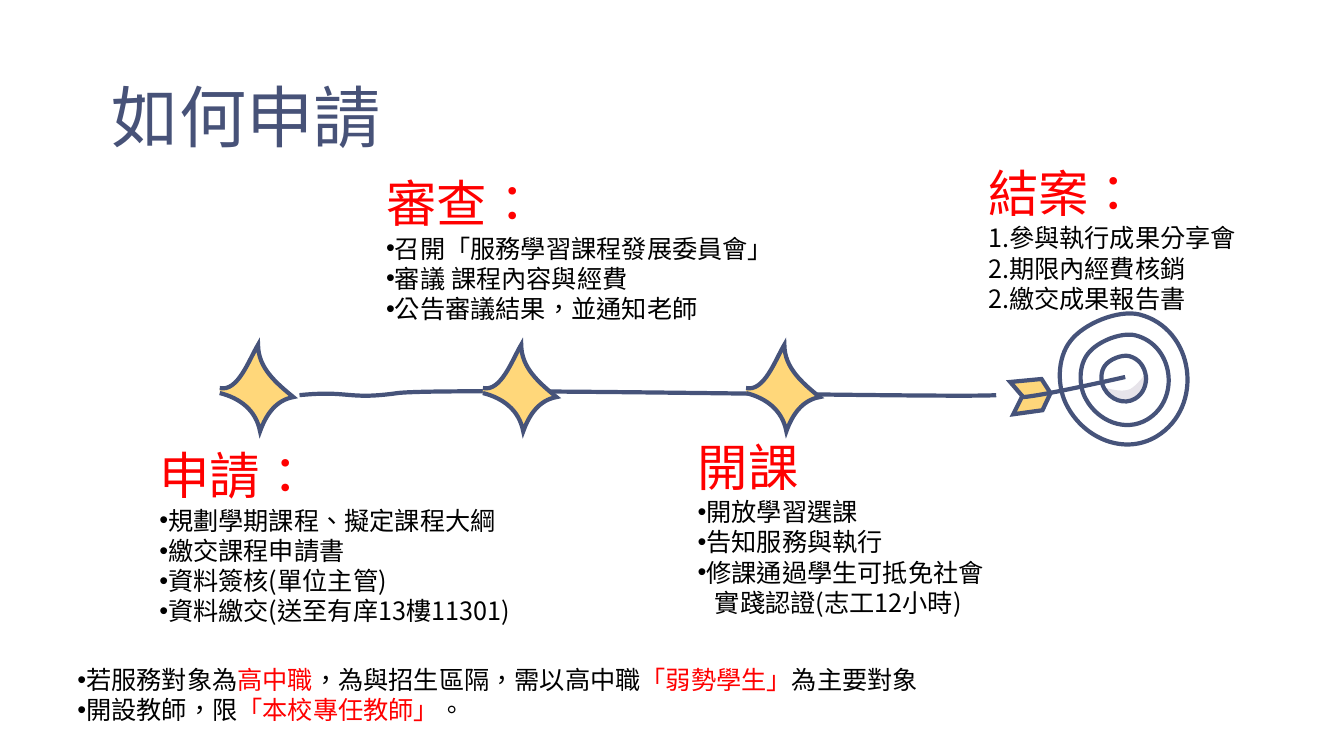
from math import cos, radians, sin

from lxml import etree
from pptx import Presentation
from pptx.dml.color import RGBColor
from pptx.enum.text import MSO_ANCHOR, MSO_AUTO_SIZE, PP_ALIGN
from pptx.oxml.ns import qn
from pptx.util import Pt

PX = 9144  # 100 px to the inch
FONT, BULLET_FONT = "Noto Sans CJK JP", "Arial"
NAVY, GOLD, RED, BLACK = "46537A", "FFD77A", "FF0000", "000000"
MIDDLE, TOP = MSO_ANCHOR.MIDDLE, MSO_ANCHOR.TOP
LEFT = PP_ALIGN.LEFT
NO_AUTOFIT = MSO_AUTO_SIZE.NONE
TARGET_TILT, TIMELINE_TILT = 34.8, 105

# Points are px from the corner of the shape's box; six numbers make a curve.
STAR = [(0, 43), (18, 47, 29, 15, 38, 0), (38, 23, 56, 38, 73, 52),
        (56, 55, 46, 69, 40, 86), (36, 65, 20, 53, 0, 48)]
TIMELINE = [(-256, 334), (-206, 329, -209, 339, -159, 332),
            (-113, 326, 390, 337, 435, 334)]
RING = [(9, 93), (26, 124, 65, 141, 97, 122), (145, 93, 135, 15, 80, 1),
        (59, -4, 25, 10, 12, 27), (-2, 44, -2, 74, 9, 93)]
RING_WIDTH = 129
SHADE = [(-6, 23), (-6, 28, 3, 33, 6, 35), (12, 37, 19, 36, 24, 33),
         (31, 29, 40, 16, 35, 8), (29, 13, 25, 20, 18, 24),
         (11, 27, 2, 25, -6, 23)]
FLETCHING = [(17, 23), (5, 9), (36, 6), (45, 20), (37, 37), (8, 41), (17, 23)]
SHAFT = [(87, 27), (87, 27, 4, 46, -15, 47)]


def color(value):
    return RGBColor.from_string(value)


def turn_back(x, y, width, height, degrees):
    """Find the point that lands on (x, y) once its box is rotated."""
    angle = radians(-degrees)
    dx, dy = x - width / 2, y - height / 2
    return (width / 2 + dx * cos(angle) - dy * sin(angle),
            height / 2 + dx * sin(angle) + dy * cos(angle))


def fill_path(path, segments, size, rotation, scale, close):
    """Replace the commands of a path by moves, lines and cubic curves."""
    for command in list(path):
        path.remove(command)
    for index, segment in enumerate(segments):
        tag = "a:cubicBezTo" if len(segment) == 6 else "a:lnTo"
        command = etree.SubElement(path, qn(tag if index else "a:moveTo"))
        for x, y in zip(segment[::2], segment[1::2]):
            x, y = turn_back(x * scale, y * scale, *size, rotation)
            etree.SubElement(command, qn("a:pt"), x=str(round(x * PX)), y=str(round(y * PX)))
    if close:
        etree.SubElement(path, qn("a:close"))


def add_outline(shapes, box, segments, fill=None, line=NAVY, rotation=0, scale=1, close=False):
    left, top, width, height = box
    builder = shapes.build_freeform(left * PX, top * PX, scale=1.0)
    builder.add_line_segments([((left + width) * PX, (top + height) * PX)], close=False)
    shape = builder.convert_to_shape()
    path = shape.element.spPr.find(".//" + qn("a:path"))
    fill_path(path, segments, (width, height), rotation, scale, close)
    shape.rotation = rotation
    shape.shadow.inherit = False
    if fill:
        shape.fill.solid()
        shape.fill.fore_color.rgb = color(fill)
    else:
        shape.fill.background()
    if line:
        shape.line.color.rgb = color(line)
        shape.line.width = Pt(3)
        outline = shape.element.spPr.find(qn("a:ln"))
        etree.SubElement(outline, qn("a:miter"), lim="800000")
    else:
        shape.line.fill.background()


def add_target(slide, left, top):
    """Draw the rings, with the arrow that hits their centre."""
    shapes = slide.shapes.add_group_shape().shapes
    add_outline(shapes, (left + 53, top + 51, 33, 38), SHADE, "E7E4EA", None,
                TARGET_TILT, close=True)
    for inset, width in ((0, RING_WIDTH), (21, 89), (42, 45)):
        add_outline(shapes, (left + inset, top + inset, width, width - 1), RING,
                    rotation=TARGET_TILT, scale=width / RING_WIDTH, close=True)
    add_outline(shapes, (left - 53, top + 59, 42, 45), FLETCHING, "FDD67A",
                rotation=TARGET_TILT, close=True)
    add_outline(shapes, (left - 21, top + 36, 72, 75), SHAFT, rotation=TARGET_TILT)


def set_frame(shape, box, anchor=MIDDLE, inset=(4, 4), wrap=True):
    shape.left, shape.top, shape.width, shape.height = (PX * value for value in box)
    frame = shape.text_frame
    frame.auto_size = NO_AUTOFIT
    frame.word_wrap = wrap
    frame.vertical_anchor = anchor
    frame.margin_left = frame.margin_right = inset[0] * PX
    frame.margin_top = frame.margin_bottom = inset[1] * PX
    return frame


def write(paragraph, runs, size, bullet=False, indent=0, spacing=1.0):
    """Fill a paragraph with (text, colour) runs."""
    properties = paragraph._p.get_or_add_pPr()
    properties.set("marL", str(indent * PX))
    properties.set("indent", "0")
    paragraph.alignment = LEFT
    paragraph.line_spacing = spacing
    if bullet:
        etree.SubElement(properties, qn("a:buFont"), typeface=BULLET_FONT)
        etree.SubElement(properties, qn("a:buChar"), char="•")
    for text, run_color in runs:
        run = paragraph.add_run()
        run.text = text
        run.font.size = Pt(size)
        run.font.name = FONT
        run.font.color.rgb = color(run_color)
        run_properties = run._r.get_or_add_rPr()
        run_properties.set("lang", "zh-TW")
        run_properties.set("altLang", "en-US")
        etree.SubElement(run_properties, qn("a:ea"), typeface=FONT)


def add_text_box(slide, box):
    return slide.shapes.add_textbox(*(PX * value for value in box))


def add_stage(slide, box, heading, items, bullet=True, spacing=1.0, continuation=None):
    frame = set_frame(add_text_box(slide, box), box)
    write(frame.paragraphs[0], [(heading, RED)], 36, spacing=spacing)
    for item in items:
        write(frame.add_paragraph(), [(item, BLACK)], 18, bullet)
    if continuation:
        write(frame.add_paragraph(), [(continuation, BLACK)], 18, indent=17)


def add_notes(slide, box, lines):
    frame = set_frame(add_text_box(slide, box), box, TOP, (10, 5), wrap=False)
    for index, runs in enumerate(lines):
        paragraph = frame.add_paragraph() if index else frame.paragraphs[0]
        write(paragraph, runs, 18, bullet=True)


def add_title(slide, box):
    frame = set_frame(slide.shapes.title, box)
    write(frame.paragraphs[0], [("如何申請", "475278")], 48, spacing=1.2)


def main():
    presentation = Presentation()
    presentation.slide_width, presentation.slide_height = 1333 * PX, 750 * PX
    slide = presentation.slides.add_slide(presentation.slide_layouts[5])

    add_title(slide, (107, 54, 437, 105))
    add_outline(slide.shapes, (553, 58, 179, 667), TIMELINE, rotation=TIMELINE_TILT)
    add_target(slide, 1050, 311)
    for index in range(3):
        add_outline(slide.shapes, (218 + 261 * index, 342, 73, 86), STAR, GOLD)

    add_stage(slide, (154, 426, 398, 198), "申請：",
              ["規劃學期課程、擬定課程大綱", "繳交課程申請書",
               "資料簽核(單位主管)", "資料繳交(送至有庠13樓11301)"], spacing=1.2)
    add_stage(slide, (379, 156, 398, 168), "審查：",
              ["召開「服務學習課程發展委員會」", "審議 課程內容與經費",
               "公告審議結果，並通知老師"], spacing=1.2)
    add_stage(slide, (688, 424, 310, 197), "開課",
              ["開放學習選課", "告知服務與執行", "修課通過學生可抵免社會"],
              continuation="實踐認證(志工12小時)")
    add_stage(slide, (976, 156, 310, 160), "結案：",
              ["1.參與執行成果分享會", "2.期限內經費核銷", "2.繳交成果報告書"],
              bullet=False)
    add_notes(slide, (67, 654, 896, 71), [
        [("若服務對象為", BLACK), ("高中職", RED),
         ("，為與招生區隔，需以高中職", BLACK), ("「弱勢學生」", RED),
         ("為主要對象", BLACK)],
        [("開設教師，限", BLACK), ("「本校專任教師」", RED), ("。", BLACK)],
    ])
    presentation.save("out.pptx")


if __name__ == "__main__":
    main()
